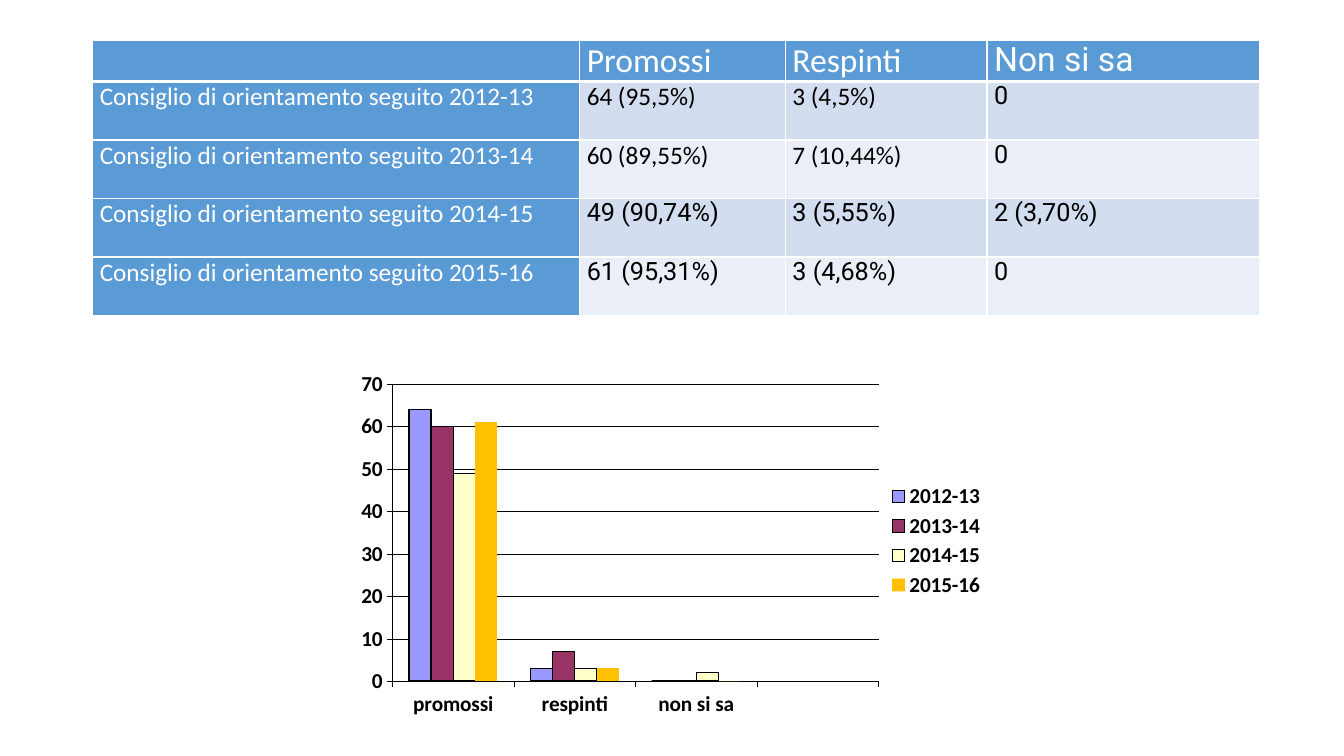
from dataclasses import dataclass

from lxml import etree
from pptx import Presentation
from pptx.chart.data import CategoryChartData
from pptx.dml.color import RGBColor
from pptx.enum.chart import XL_CHART_TYPE, XL_LEGEND_POSITION, XL_TICK_LABEL_POSITION, XL_TICK_MARK
from pptx.enum.text import PP_ALIGN
from pptx.oxml import parse_xml
from pptx.oxml.ns import nsdecls, qn
from pptx.util import Inches, Pt

JUSTIFY = PP_ALIGN.JUSTIFY
COLUMNS = XL_CHART_TYPE.COLUMN_CLUSTERED
LEGEND_RIGHT = XL_LEGEND_POSITION.RIGHT
LABELS_LOW = XL_TICK_LABEL_POSITION.LOW
TICK_OUTSIDE = XL_TICK_MARK.OUTSIDE
TICK_NONE = XL_TICK_MARK.NONE

HEADERS = ["", "Promossi", "Respinti", "Non si sa"]
ADVICE = "Consiglio di orientamento seguito "
RESULTS = [
    ("2012-13", ["64 (95,5%)", "3 (4,5%)", "0"], (64, 3, 0, None)),
    ("2013-14", ["60 (89,55%)", "7 (10,44%)", "0"], (60, 7, 0, None)),
    ("2014-15", ["49 (90,74%)", "3 (5,55%)", "2 (3,70%)"], (49, 3, 2, None)),
    ("2015-16", ["61 (95,31%)", "3 (4,68%)", "0"], (61, 3, 0, None)),
]
CATEGORIES = ["promossi", "respinti", "non si sa", ""]

SLIDE_SIZE = (13.33, 7.5)
TABLE_ORIGIN = (0.92, 0.4)
COLUMN_WIDTHS = [4.83, 2.04, 2, 2.7]
ROW_HEIGHTS = [0.41] + [0.58] * len(RESULTS)
CELL_INSET = 0.07
CHART_BOX = (3.45, 3.55, 6.42, 3.63)
PLOT_SHARES = {"x": 0.069, "y": 0.072, "w": 0.751, "h": 0.812}


@dataclass(frozen=True)
class Theme:
    font: str = "Calibri"
    alternate_font: str = "Roboto"
    header_size: float = 24
    body_size: float = 18
    chart_size: float = 15.2
    thin_line: float = 0.25
    border: float = 1
    header_border: float = 3
    accent: str = "5B9BD5"
    bands: tuple = ("D2DEEF", "EAEFF7")
    light: str = "FFFFFF"
    dark: str = "000000"
    series: tuple = ("9999FF", "993366", "FFFFCC", "FFC000")


THEME = Theme()


def color(code):
    return RGBColor.from_string(code)


def style_font(font, name, size, code, bold=False):
    font.name = name
    font.size = Pt(size)
    font.bold = bold
    font.color.rgb = color(code)


def style_line(line, width):
    line.color.rgb = color(THEME.dark)
    line.width = Pt(width)


def add_borders(cell, bottom):
    properties = cell._tc.get_or_add_tcPr()
    for side in "LRTB":
        width = Pt(bottom if side == "B" else THEME.border)
        properties.append(parse_xml(
            f'<a:ln{side} {nsdecls("a")} w="{width}"><a:solidFill>'
            f'<a:srgbClr val="{THEME.light}"/></a:solidFill></a:ln{side}>'))


def uses_alternate_font(row, column):
    return column == 3 or (row >= 3 and column > 0)


def fill_cell(cell, row, column, text):
    header = row == 0
    accented = header or column == 0
    cell.margin_left = cell.margin_right = Inches(CELL_INSET)
    cell.margin_top = cell.margin_bottom = 0
    add_borders(cell, THEME.header_border if header else THEME.border)
    cell.fill.solid()
    cell.fill.fore_color.rgb = color(THEME.accent if accented else THEME.bands[(row - 1) % 2])
    if text:
        paragraph = cell.text_frame.paragraphs[0]
        paragraph.alignment = JUSTIFY
        run = paragraph.add_run()
        run.text = text
        style_font(run.font,
                   THEME.alternate_font if uses_alternate_font(row, column) else THEME.font,
                   THEME.header_size if header else THEME.body_size,
                   THEME.light if accented else THEME.dark)


def add_results_table(slide):
    rows = [HEADERS] + [[ADVICE + year] + shares for year, shares, counts in RESULTS]
    box = (*TABLE_ORIGIN, sum(COLUMN_WIDTHS), sum(ROW_HEIGHTS))
    table = slide.shapes.add_table(len(rows), len(HEADERS), *map(Inches, box)).table
    for column, width in zip(table.columns, COLUMN_WIDTHS):
        column.width = Inches(width)
    for row, height in zip(table.rows, ROW_HEIGHTS):
        row.height = Inches(height)
    for row, texts in enumerate(rows):
        for column, text in enumerate(texts):
            fill_cell(table.cell(row, column), row, column, text)


def place_plot(chart):
    plot_area = chart._chartSpace.chart.plotArea
    for automatic in plot_area.findall(qn("c:layout")):
        plot_area.remove(automatic)
    layout = etree.Element(qn("c:layout"))
    manual = etree.SubElement(layout, qn("c:manualLayout"))
    settings = {"layoutTarget": "inner", "xMode": "edge", "yMode": "edge", **PLOT_SHARES}
    for name, value in settings.items():
        etree.SubElement(manual, qn("c:" + name)).set("val", str(value))
    plot_area.insert(0, layout)


def add_results_chart(slide):
    data = CategoryChartData()
    data.categories = CATEGORIES
    for year, shares, counts in RESULTS:
        data.add_series(year, counts)
    chart = slide.shapes.add_chart(COLUMNS, *map(Inches, CHART_BOX), data).chart
    chart.has_title = False
    chart.has_legend = True
    chart.legend.position = LEGEND_RIGHT
    chart.legend.include_in_layout = False
    for part in (chart, chart.legend):
        style_font(part.font, THEME.font, THEME.chart_size, THEME.dark, True)

    for axis in (chart.category_axis, chart.value_axis):
        axis.major_tick_mark = TICK_OUTSIDE
        axis.minor_tick_mark = TICK_NONE
        style_font(axis.tick_labels.font, THEME.font, THEME.chart_size, THEME.dark, True)
        style_line(axis.format.line, THEME.thin_line)
    chart.category_axis.tick_label_position = LABELS_LOW
    chart.value_axis.minimum_scale = 0
    chart.value_axis.maximum_scale = 70
    chart.value_axis.major_unit = 10
    style_line(chart.value_axis.major_gridlines.format.line, THEME.thin_line)

    plot = chart.plots[0]
    plot.gap_width = 150
    plot.overlap = 0
    plot.vary_by_categories = False
    for series, code in zip(plot.series, THEME.series):
        series.invert_if_negative = False
        series.format.fill.solid()
        series.format.fill.fore_color.rgb = color(code)
        if code == THEME.series[-1]:
            series.format.line.fill.background()
        else:
            style_line(series.format.line, THEME.border)
    place_plot(chart)


def main():
    presentation = Presentation()
    presentation.slide_width, presentation.slide_height = map(Inches, SLIDE_SIZE)
    slide = presentation.slides.add_slide(presentation.slide_layouts[6])
    add_results_table(slide)
    add_results_chart(slide)
    presentation.save("out.pptx")


if __name__ == "__main__":
    main()
